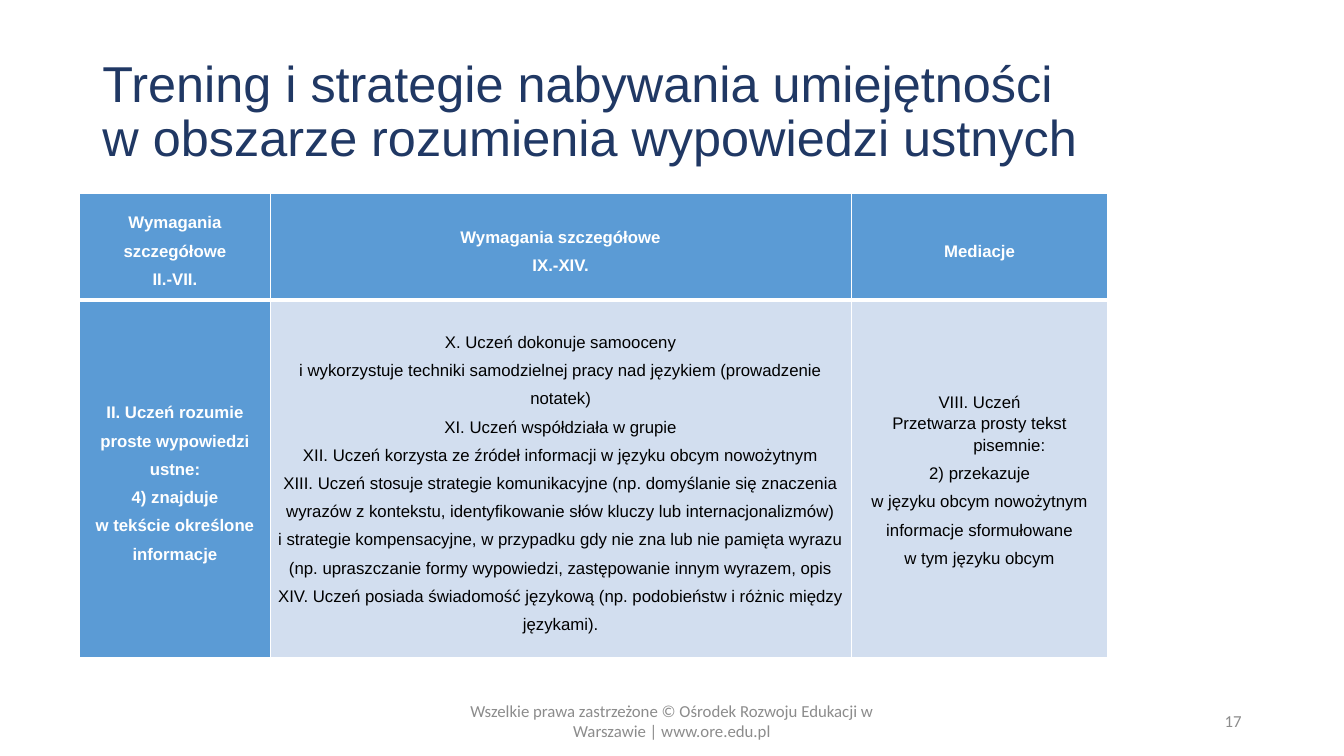
import pptx
import pptx.util
import pptx.dml.color
import pptx.enum.text
import pptx.oxml
import pptx.oxml.ns

Pt = pptx.util.Pt
ALIGN = pptx.enum.text.PP_ALIGN
MIDDLE = pptx.enum.text.MSO_ANCHOR.MIDDLE

COLOURS = {
    "title": "203864",
    "header": "5B9BD5",
    "body": "D2DEEF",
    "white": "FFFFFF",
    "black": "000000",
    "footer": "8C8C8C",
}

TITLE = ["Trening i strategie nabywania umiejętności",
         "w obszarze rozumienia wypowiedzi ustnych"]

COLUMN_WIDTHS = [136, 415, 183.5]
ROW_HEIGHTS = [76.3, 255.6]
HANGING = 42.5

# Each cell is a list of paragraphs; "\n" is a line break within one.
ROWS = [
    [
        ["Wymagania szczegółowe", "II.-VII."],
        ["Wymagania szczegółowe", "IX.-XIV."],
        ["Mediacje"],
    ],
    [
        ["II. Uczeń rozumie proste wypowiedzi ustne:",
         "4) znajduje",
         "w tekście określone informacje"],
        ["X. Uczeń dokonuje samooceny",
         "i wykorzystuje techniki samodzielnej pracy nad językiem (prowadzenie notatek)",
         "XI. Uczeń współdziała w grupie",
         "XII. Uczeń korzysta ze źródeł informacji w języku obcym nowożytnym\n"
         "XIII. Uczeń stosuje strategie komunikacyjne (np. domyślanie się znaczenia "
         "wyrazów z kontekstu, identyfikowanie słów kluczy lub internacjonalizmów)",
         "i strategie kompensacyjne, w przypadku gdy nie zna lub nie pamięta wyrazu "
         "(np. upraszczanie formy wypowiedzi, zastępowanie innym wyrazem, opis",
         "XIV. Uczeń posiada świadomość językową (np. podobieństw i różnic między "
         "językami)."],
        ["VIII. Uczeń",
         "Przetwarza prosty tekst pisemnie:",
         "2) przekazuje",
         "w języku obcym nowożytnym informacje sformułowane",
         "w tym języku obcym"],
    ],
]


def rgb(name):
    return pptx.dml.color.RGBColor.from_string(COLOURS[name])


def add_lines(para, lines, size, font, colour, bold=False):
    """Write the lines as runs of one paragraph, with line breaks between."""
    for number, line in enumerate(lines):
        if number:
            para.add_line_break()
        span = para.add_run()
        span.text = line
        span.font.size = Pt(size)
        span.font.name = font
        span.font.bold = bold
        span.font.color.rgb = rgb(colour)


def set_title(page):
    title = page.shapes.title
    title.left, title.top, title.width, title.height = Pt(66), Pt(29), Pt(828), Pt(104)
    title.text_frame.vertical_anchor = MIDDLE
    para = title.text_frame.paragraphs[0]
    para.alignment = ALIGN.LEFT
    para.line_spacing = 0.9
    add_lines(para, TITLE, 36, "Arial", "title")


def set_hanging_indent(para):
    properties = para._p.get_or_add_pPr()
    properties.set("marL", str(Pt(HANGING)))
    properties.set("indent", str(-Pt(HANGING)))


def set_borders(cell, bottom):
    """Draw white borders: 1 pt at the sides and top, the given width below."""
    properties = cell._tc.get_or_add_tcPr()
    widths = {"lnL": 1, "lnR": 1, "lnT": 1, "lnB": bottom}
    for position, (side, width) in enumerate(widths.items()):
        border = pptx.oxml.parse_xml(
            f'<a:{side} {pptx.oxml.ns.nsdecls("a")} w="{Pt(width)}"><a:solidFill>'
            f'<a:srgbClr val="{COLOURS["white"]}"/></a:solidFill></a:{side}>')
        properties.insert(position, border)


def fill_cell(cell, texts, heading):
    cell.fill.solid()
    cell.fill.fore_color.rgb = rgb("header" if heading else "body")
    cell.vertical_anchor = MIDDLE
    cell.margin_left = cell.margin_right = Pt(5)
    cell.margin_top = cell.margin_bottom = 0
    frame = cell.text_frame
    for number, text in enumerate(texts):
        para = frame.add_paragraph() if number else frame.paragraphs[0]
        para.alignment = ALIGN.CENTER
        para.line_spacing = 1.5
        add_lines(para, text.split("\n"), 12, "Arial",
                  "white" if heading else "black", heading)


def add_requirements_table(page):
    table = page.shapes.add_table(
        len(ROW_HEIGHTS), len(COLUMN_WIDTHS), Pt(57), Pt(138),
        Pt(sum(COLUMN_WIDTHS)), Pt(sum(ROW_HEIGHTS))).table
    for column, width in zip(table.columns, COLUMN_WIDTHS):
        column.width = Pt(width)
    for row, height in zip(table.rows, ROW_HEIGHTS):
        row.height = Pt(height)
    for r, texts in enumerate(ROWS):
        for c, paragraphs in enumerate(texts):
            cell = table.cell(r, c)
            fill_cell(cell, paragraphs, heading=r == 0 or c == 0)
            set_borders(cell, bottom=3 if r == 0 else 1)
    for para in table.cell(1, 2).text_frame.paragraphs[:2]:
        para.line_spacing = 1.15
        set_hanging_indent(para)


def add_footer(page, left, width, text, alignment):
    box = page.shapes.add_textbox(Pt(left), Pt(500.5), Pt(width), Pt(29))
    frame = box.text_frame
    frame.word_wrap = True
    frame.vertical_anchor = MIDDLE
    para = frame.paragraphs[0]
    para.alignment = alignment
    add_lines(para, [text], 12, "Calibri", "footer")


def main():
    deck = pptx.Presentation()
    deck.slide_width, deck.slide_height = Pt(960), Pt(540)
    page = deck.slides.add_slide(deck.slide_layouts[5])
    set_title(page)
    add_requirements_table(page)
    add_footer(page, 318, 324,
               "Wszelkie prawa zastrzeżone © Ośrodek Rozwoju Edukacji w Warszawie"
               " | www.ore.edu.pl", ALIGN.CENTER)
    add_footer(page, 678, 216, "17", ALIGN.RIGHT)
    deck.save("out.pptx")


if __name__ == "__main__":
    main()
